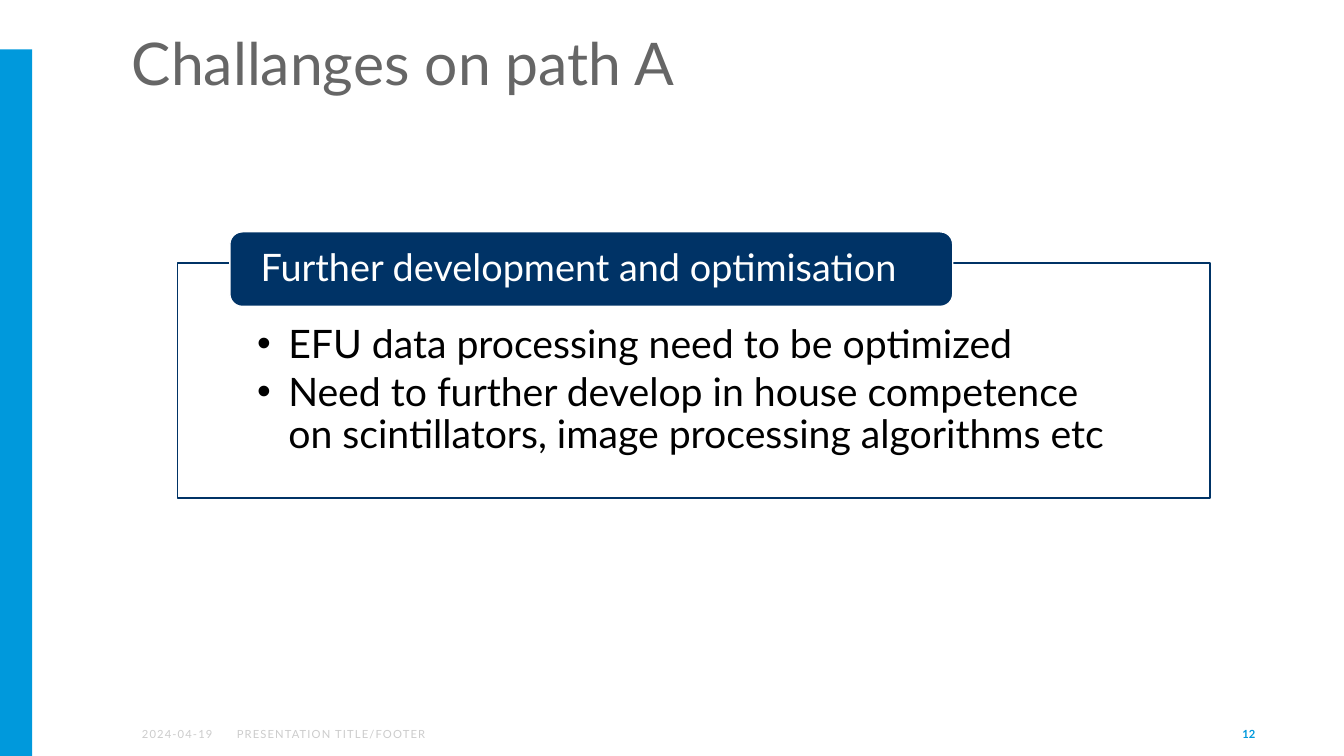
from dataclasses import dataclass

from lxml.etree import SubElement
from pptx import Presentation
from pptx.dml.color import RGBColor
from pptx.enum.shapes import MSO_SHAPE as Shape
from pptx.enum.text import MSO_ANCHOR as Anchor, PP_ALIGN as Align
from pptx.oxml.ns import qn
from pptx.util import Pt

TITLE = "Challanges on path A"
HEADING = "Further development and optimisation"
CHALLENGES = [
    "EFU data processing need to be optimized",
    "Need to further develop in house competence on scintillators, image processing algorithms etc",
]
FOOTER = [
    dict(text="2024-04-19", left=131, width=91),
    dict(text="PRESENTATION TITLE/FOOTER", left=225, width=472),
    dict(text="12", left=955, width=300, is_number=True),
]

PX = 9144
SLIDE_W, SLIDE_H = 1333, 750
FOOTER_TOP, FOOTER_H = 708, 40
PANEL = (176, 261, 1024, 233)
TAB = (228, 230, 717, 74)
BULLET_INDENT = 31


@dataclass(frozen=True)
class Theme:
    font: str = "Lato"
    accent: str = "0099DC"
    navy: str = "003366"
    white: str = "FFFFFF"
    title: str = "666666"
    body: str = "000000"
    muted: str = "CCCCCC"
    title_size: int = 42
    body_size: int = 28
    heading_size: int = 27
    footer_size: int = 8


theme = Theme()
deck = Presentation()
deck.slide_width, deck.slide_height = SLIDE_W * PX, SLIDE_H * PX
slide = deck.slides.add_slide(deck.slide_layouts[6])


def emu(box):
    return [length * PX for length in box]


def add_block(kind, box, fill, line=None):
    block = slide.shapes.add_shape(kind, *emu(box))
    block.shadow.inherit = False
    block.fill.solid()
    block.fill.fore_color.rgb = RGBColor.from_string(fill)
    if line:
        block.line.color.rgb = RGBColor.from_string(line)
        block.line.width = Pt(1)
    else:
        block.line.fill.background()
    return block


def set_frame(holder, insets=(10, 5, 10, 5), anchor=Anchor.TOP):
    frame = holder.text_frame
    frame.word_wrap = True
    frame.vertical_anchor = anchor
    (frame.margin_left, frame.margin_top,
     frame.margin_right, frame.margin_bottom) = emu(insets)
    return frame


def add_run(paragraph, text, size, color, bold=False, align=Align.LEFT, leading=None):
    paragraph.alignment = align
    if leading:
        paragraph.line_spacing = leading
    run = paragraph.add_run()
    run.text = text
    run.font.name = theme.font
    run.font.size = Pt(size)
    run.font.bold = bold
    run.font.color.rgb = RGBColor.from_string(color)
    return run


def add_bullet(paragraph):
    props = paragraph._p.get_or_add_pPr()
    props.set("marL", str(BULLET_INDENT * PX))
    props.set("indent", str(-BULLET_INDENT * PX))
    SubElement(props, qn("a:buFont"), typeface="Arial")
    SubElement(props, qn("a:buChar"), char="•")


add_block(Shape.RECTANGLE, (0, 49, 32, SLIDE_H - 49), theme.accent)

title = slide.shapes.add_textbox(*emu((121, 29, 1024, 72)))
add_run(set_frame(title, (10, 5, 10, 2)).paragraphs[0], TITLE,
        theme.title_size, theme.title, leading=0.9)

for item in FOOTER:
    is_number = item.get("is_number", False)
    footer = slide.shapes.add_textbox(
        *emu((item["left"], FOOTER_TOP, item["width"], FOOTER_H)))
    run = add_run(set_frame(footer, anchor=Anchor.MIDDLE).paragraphs[0],
                  item["text"], theme.footer_size,
                  theme.accent if is_number else theme.muted,
                  bold=is_number, align=Align.RIGHT if is_number else Align.LEFT)
    if not is_number:
        run.font._element.set("spc", "80")

panel = add_block(Shape.RECTANGLE, PANEL, theme.white, theme.navy)
panel_fill = panel._element.spPr.find(qn("a:solidFill"))
SubElement(panel_fill[0], qn("a:alpha"), val="90000")
challenges = set_frame(panel, (79, 61, 79, 22))
for index, challenge in enumerate(CHALLENGES):
    paragraph = challenges.add_paragraph() if index else challenges.paragraphs[0]
    paragraph.space_after = Pt(4)
    add_bullet(paragraph)
    add_run(paragraph, challenge, theme.body_size, theme.body, leading=0.9)

tab = add_block(Shape.ROUNDED_RECTANGLE, TAB, theme.navy, theme.white)
add_run(set_frame(tab, (27, 0, 27, 0), Anchor.MIDDLE).paragraphs[0], HEADING,
        theme.heading_size, theme.white, leading=0.9)

deck.save("out.pptx")
